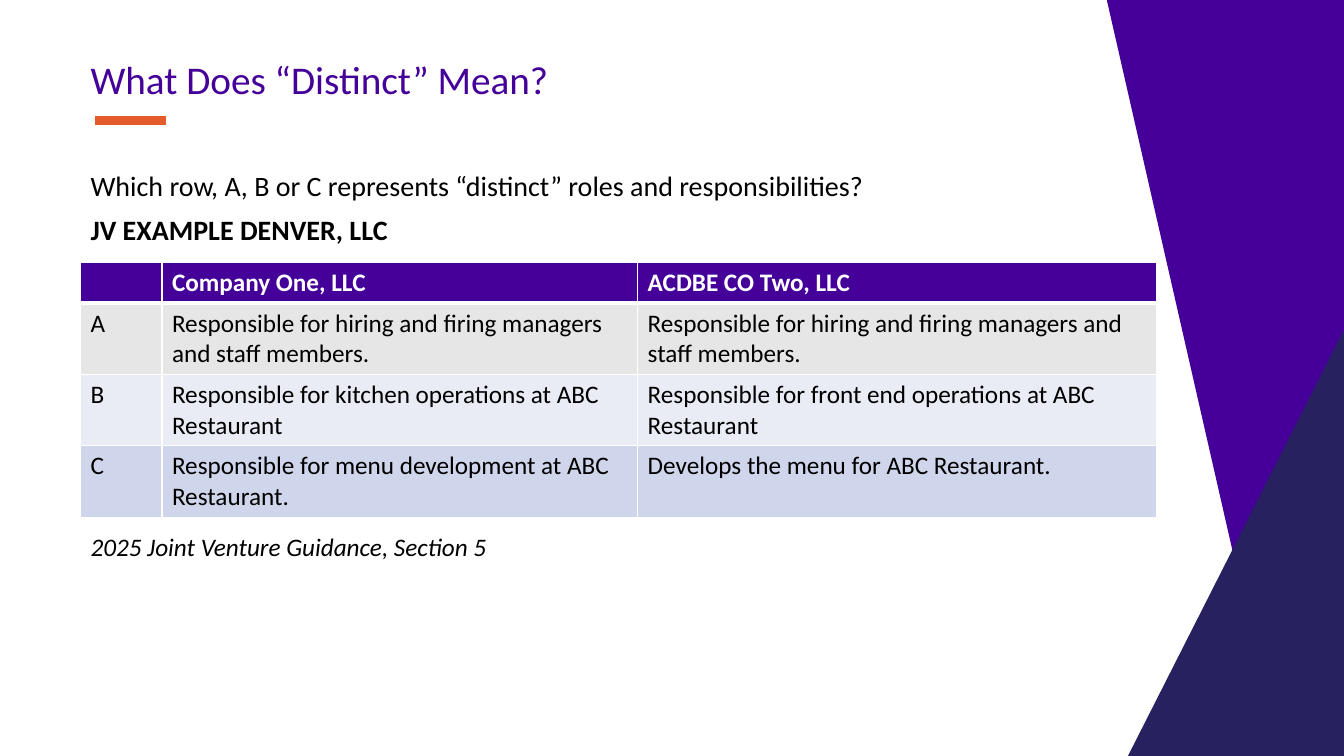
import pptx
import pptx.util
import pptx.dml.color
import pptx.enum.shapes
from lxml import etree
from pptx.oxml.ns import qn

# Content
TITLE = "What Does “Distinct” Mean?"
INTRO = [
    ("Which row, A, B or C represents “distinct” roles and responsibilities?", False),
    ("JV EXAMPLE DENVER, LLC", True),
]
ROLES = [
    ("", "Company One, LLC", "ACDBE CO Two, LLC"),
    ("A", "Responsible for hiring and firing managers and staff members.",
     "Responsible for hiring and firing managers and staff members."),
    ("B", "Responsible for kitchen operations at ABC Restaurant",
     "Responsible for front end operations at ABC Restaurant"),
    ("C", "Responsible for menu development at ABC Restaurant.",
     "Develops the menu for ABC Restaurant."),
]
CITATION = "2025 Joint Venture Guidance, Section 5"

THEME = {
    "font": "Calibri", "title_size": 28, "intro_size": 20, "text_size": 18,
    "purple": "440099", "navy": "282160", "orange": "E35B2A",
    "black": "000000", "white": "FFFFFF",
    "row_fills": ["440099", "E7E6E6", "E9EBF5", "CFD5EA"],
}

# Layout, in points
LEFT = 57.6
COLUMN_WIDTHS = [58.1, 339.8, 370.8]
ROW_HEIGHTS = [29, 51, 51, 51]
PANELS = [
    ("purple", [(961.2, -0.7), (962.6, 540.7), (913.7, 539.3), (790.6, 0)]),
    ("navy", [(962.6, 540.7), (961.9, 231.8), (805.7, 540)]),
]

Pt = pptx.util.Pt


def rgb(value):
    return pptx.dml.color.RGBColor.from_string(value)


def style(paragraph, size, color="000000", bold=False, italic=False):
    font = paragraph.font
    font.name, font.size = THEME["font"], Pt(size)
    font.bold, font.italic = bold, italic
    font.color.rgb = rgb(color)


def add_text(slide, box, lines, size, color, italic=False, spacing=1.0):
    frame = slide.shapes.add_textbox(*map(Pt, box)).text_frame
    frame.word_wrap = True
    for i, (text, bold) in enumerate(lines):
        paragraph = frame.add_paragraph() if i else frame.paragraphs[0]
        paragraph.text = text
        paragraph.line_spacing = spacing
        if i:
            paragraph.space_before = Pt(10)
        style(paragraph, size, color, bold, italic)


def add_borders(cell, header):
    properties = cell._tc.get_or_add_tcPr()
    for i, side in enumerate(("lnL", "lnR", "lnT", "lnB")):
        width = 3 if header and side == "lnB" else 1
        line = etree.Element(qn("a:" + side), w=str(int(Pt(width))))
        fill = etree.SubElement(line, qn("a:solidFill"))
        etree.SubElement(fill, qn("a:srgbClr"), val=THEME["white"])
        properties.insert(i, line)


presentation = pptx.Presentation()
presentation.slide_width, presentation.slide_height = Pt(960), Pt(540)
slide = presentation.slides.add_slide(presentation.slide_layouts[6])

# Accent rule under the title
accent = slide.shapes.add_connector(
    pptx.enum.shapes.MSO_CONNECTOR.STRAIGHT, Pt(68.2), Pt(86.2), Pt(118.7), Pt(86.2))
accent.line.color.rgb = rgb(THEME["orange"])
accent.line.width = Pt(6)
etree.SubElement(accent._element.spPr, qn("a:effectLst"))

# Angled panels on the right
for color, corners in PANELS:
    points = [(Pt(x), Pt(y)) for x, y in corners]
    builder = slide.shapes.build_freeform(*points[0])
    builder.add_line_segments(points[1:], close=True)
    panel = builder.convert_to_shape()
    panel.shadow.inherit = False
    panel.fill.solid()
    panel.fill.fore_color.rgb = rgb(THEME[color])
    panel.line.fill.background()

# Title
add_text(slide, (LEFT, 39.6, 747.4, 45.4), [(TITLE, False)],
         THEME["title_size"], THEME["purple"], spacing=0.9)

# Table of roles
roles = slide.shapes.add_table(
    len(ROLES), len(COLUMN_WIDTHS), Pt(LEFT), Pt(187.5),
    Pt(sum(COLUMN_WIDTHS)), Pt(sum(ROW_HEIGHTS))).table
roles.horz_banding = False
for column, width in zip(roles.columns, COLUMN_WIDTHS):
    column.width = Pt(width)
for r, entries in enumerate(ROLES):
    roles.rows[r].height = Pt(ROW_HEIGHTS[r])
    header = r == 0
    for c, text in enumerate(entries):
        cell = roles.cell(r, c)
        cell.text = text
        cell.fill.solid()
        cell.fill.fore_color.rgb = rgb(THEME["row_fills"][r])
        add_borders(cell, header)
        style(cell.text_frame.paragraphs[0], THEME["text_size"],
              THEME["white" if header else "black"], bold=header)

# Question and citation
add_text(slide, (LEFT, 119.5, 684.7, 33.8), INTRO,
         THEME["intro_size"], THEME["black"], spacing=0.9)
add_text(slide, (LEFT, 375.8, 481.7, 29), [(CITATION, False)],
         THEME["text_size"], THEME["black"], italic=True)

presentation.save("out.pptx")
